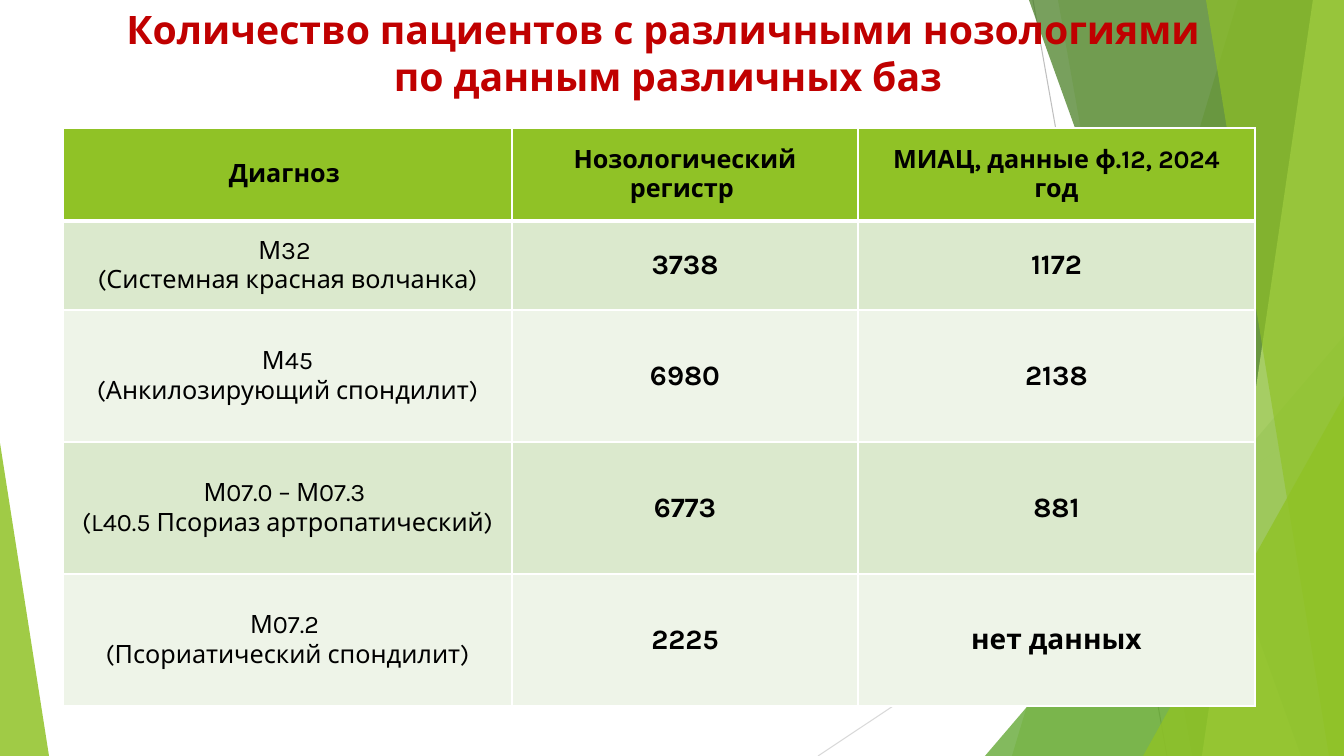
from lxml import etree
from pptx import Presentation
from pptx import util as u
from pptx.dml import color
from pptx.enum import shapes, text
from pptx.oxml import ns

PX = 914400 / 100.8
WIDTH, HEIGHT = 1344, 756
FONT = "Karla"
GREEN = "90C226"
TITLE = ["Количество пациентов с различными нозологиями ", "по данным различных баз"]
HEADER = ["Диагноз ", "Нозологический регистр ", "МИАЦ, данные ф.12, 2024 год"]
PATIENTS = [
    (["М32 ", "(Системная красная волчанка)"], "3738", "1172"),
    (["М45", "(Анкилозирующий спондилит)"], "6980", "2138"),
    (["М07.0 – М07.3 ", "(L40.5 Псориаз артропатический)"], "6773", "881"),
    (["М07.2 ", "(Псориатический спондилит)"], "2225", "нет данных"),
]


def px(n):
    return u.Emu(round(n * PX))


def rgb(value):
    return color.RGBColor.from_string(value)


def sub(parent, tag, **attrs):
    return etree.SubElement(parent, ns.qn(tag), attrs)


def tint(sp, fill, alpha):
    sp.shadow.inherit = False
    sp.line.fill.background()
    sp.fill.solid()
    sp.fill.fore_color.rgb = rgb(fill)
    clr = sp.fill._xPr.find(".//" + ns.qn("a:srgbClr"))
    sub(clr, "a:alpha", val=str(alpha * 1000))


def add_line(s, x1, y1, x2, y2, hex_color):
    line = s.shapes.add_connector(shapes.MSO_CONNECTOR.STRAIGHT, px(x1), px(y1), px(x2), px(y2))
    line.line.color.rgb = rgb(hex_color)
    line.line.width = u.Pt(0.75)
    sub(line._element.spPr, "a:effectLst")


def add_wedge(s, top_x, bottom_x, right, bottom, fill, alpha):
    outline = s.shapes.build_freeform(px(top_x), 0, scale=1.0)
    outline.add_line_segments([(px(right), 0), (px(right), px(bottom)), (px(bottom_x), px(bottom))])
    tint(outline.convert_to_shape(), fill, alpha)


def add_triangle(s, x, y, w, h, apex, fill, alpha):
    sp = s.shapes.add_shape(shapes.MSO_SHAPE.ISOSCELES_TRIANGLE, px(x), px(y), px(w), px(h))
    sp.adjustments[0] = apex
    tint(sp, fill, alpha)


def add_backdrop(s, w, h):
    add_line(s, w - 311, 0, w - 177, h, "BFBFBF")
    add_line(s, w, h - 350, w - 526, h, "D9D9D9")
    add_wedge(s, w - 106, w - 332, w, h, GREEN, 30)
    add_wedge(s, w - 286, w - 152, w, h, GREEN, 20)
    add_triangle(s, w - 359, h - 420, 359, 420, 1, "54A021", 72)
    add_wedge(s, w - 315, w - 43, w, h, "3F7819", 70)
    add_wedge(s, w - 31, w - 142, w, h, "C0E474", 70)
    add_wedge(s, w - 138, w - 15, w, h, GREEN, 65)
    add_triangle(s, w - 201, h - 360, 201, 360, 1, GREEN, 80)
    add_triangle(s, 0, h - 313, 49, 313, 0, GREEN, 85)


def write(tf, lines, size, bold, hex_color="000000"):
    tf.word_wrap = True
    for i, line in enumerate(lines):
        p = tf.add_paragraph() if i else tf.paragraphs[0]
        p.alignment = text.PP_ALIGN.CENTER
        r = p.add_run()
        r.text = line
        r.font.name = FONT
        r.font.size = u.Pt(size)
        r.font.bold = bold
        r.font.color.rgb = rgb(hex_color)


def add_title(s, x, y, w, h):
    tf = s.shapes.add_textbox(px(x), px(y), px(w), px(h)).text_frame
    write(tf, TITLE, 28, True, "C00000")
    tf.auto_size = text.MSO_AUTO_SIZE.SHAPE_TO_FIT_TEXT


def format_cell(cell, fill, top, bottom):
    tcPr = cell._tc.get_or_add_tcPr()
    for side, points in (("L", 1), ("R", 1), ("T", top), ("B", bottom)):
        ln = sub(tcPr, "a:ln" + side, w=str(u.Pt(points)))
        sub(sub(ln, "a:solidFill"), "a:srgbClr", val="FFFFFF")
    cell.vertical_anchor = text.MSO_ANCHOR.MIDDLE
    cell.fill.solid()
    cell.fill.fore_color.rgb = rgb(fill)


def add_patients_table(s, x, y, col_widths, row_heights):
    table = s.shapes.add_table(len(row_heights), len(col_widths), px(x), px(y),
                               px(sum(col_widths)), px(sum(row_heights))).table
    for column, width in zip(table.columns, col_widths):
        column.width = px(width)
    for row, height in zip(table.rows, row_heights):
        row.height = px(height)
    for c, label in enumerate(HEADER):
        cell = table.cell(0, c)
        format_cell(cell, GREEN, 1, 3)
        write(cell.text_frame, [label], 18, True)
    for r, (diagnosis, *counts) in enumerate(PATIENTS, 1):
        for c, lines in enumerate([diagnosis] + [[count] for count in counts]):
            cell = table.cell(r, c)
            format_cell(cell, "DBE9CD" if r % 2 else "EEF4E8", 3 if r == 1 else 1, 1)
            write(cell.text_frame, lines, 20 if c else 18, c > 0)


def main():
    prs = Presentation()
    prs.slide_width, prs.slide_height = px(WIDTH), px(HEIGHT)
    s = prs.slides.add_slide(prs.slide_layouts[6])
    add_backdrop(s, WIDTH, HEIGHT)
    add_patients_table(s, 63, 128, [449, 346, 397], [93, 89, 132, 132, 132])
    add_title(s, 42, 0, 1252, 105)
    prs.save("out.pptx")


if __name__ == "__main__":
    main()
